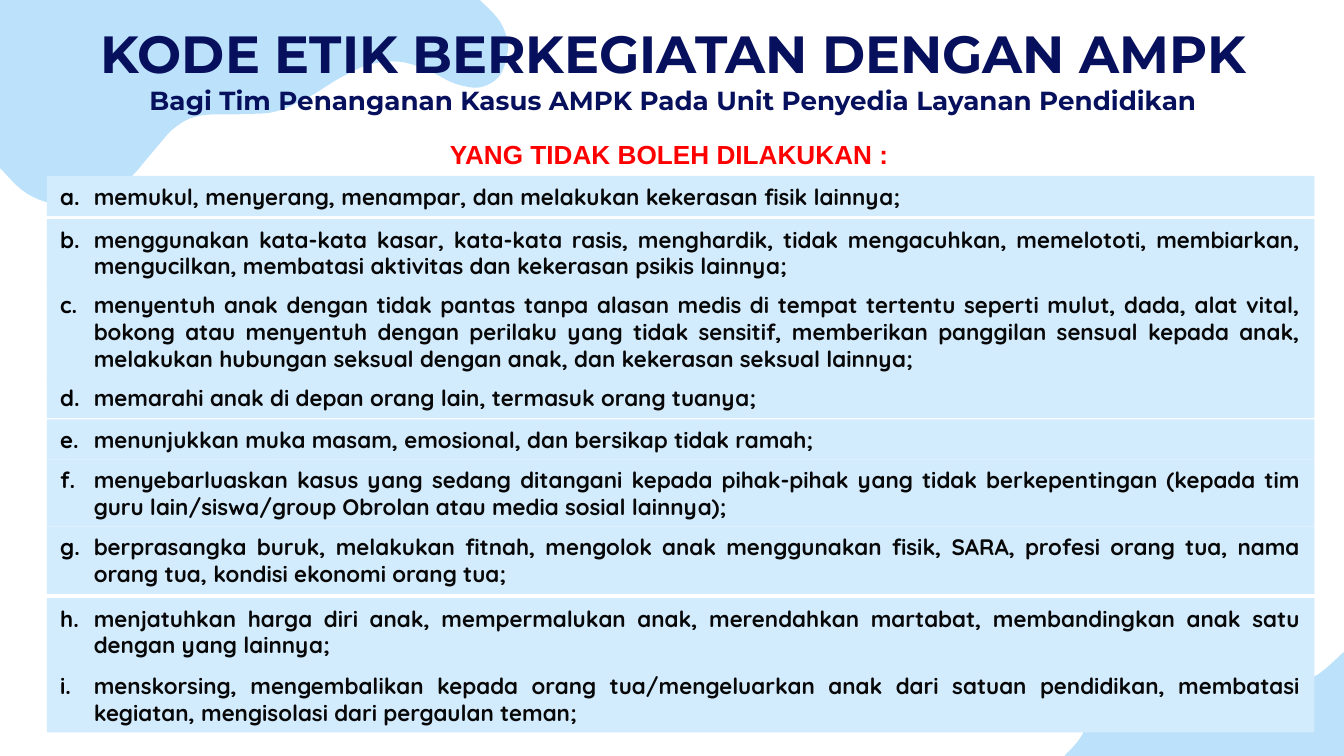
from lxml import etree
from pptx import Presentation
from pptx.dml.color import RGBColor
from pptx.enum.shapes import MSO_SHAPE
from pptx.enum.text import MSO_ANCHOR, MSO_AUTO_SIZE, PP_ALIGN
from pptx.oxml.ns import qn
from pptx.util import Inches, Pt

RECT = MSO_SHAPE.RECTANGLE
MIDDLE = MSO_ANCHOR.MIDDLE
GROW = MSO_AUTO_SIZE.SHAPE_TO_FIT_TEXT
CENTER, JUSTIFY = PP_ALIGN.CENTER, PP_ALIGN.JUSTIFY
NAVY, RED, INK = "07105C", "FF0000", "080808"
SKY, PALE = "8FCEF9", "D2EBFD"


def color(code):
    return RGBColor.from_string(code)


def add_run(para, text, size, font, code):
    run = para.add_run()
    run.text = text
    run.font.size = Pt(size)
    run.font.name = font
    run.font.bold = True
    run.font.color.rgb = color(code)


prs = Presentation()
prs.slide_width = Inches(10)
prs.slide_height = Inches(10) * 9 // 16
slide = prs.slides.add_slide(prs.slide_layouts[6])
shapes = slide.shapes

# Corner blobs: a corner, then points on a smooth edge, in 1/100 inch
blobs = [
    ((0, 0), [(357, 0), (372, 16), (378, 35), (372, 56), (357, 65), (338, 62),
              (320, 53), (298, 46), (275, 48), (253, 58), (230, 72), (205, 83),
              (179, 85), (149, 86), (130, 95), (112, 115), (95, 134),
              (74, 146), (45, 152), (20, 144), (0, 125)]),
    ((1000, 562.5), [(1000, 485), (977, 504), (949, 510), (919, 495), (867, 487),
                     (815, 497), (815, 521), (805, 547), (792, 562.5)]),
]
STEPS = 6
for corner, edge in blobs:
    ends = [edge[0]] + edge + [edge[-1]]
    curve = [edge[0]]
    for a, b, c, d in zip(ends, ends[1:], ends[2:], ends[3:]):
        for step in range(1, STEPS + 1):
            t = step / STEPS
            # Catmull-Rom spline between b and c
            curve.append(tuple(
                (2 * q + (r - p) * t + (2 * p - 5 * q + 4 * r - s) * t**2
                 + (3 * q - p - 3 * r + s) * t**3) * 5
                for p, q, r, s in zip(a, b, c, d)))
    curve[0] = tuple(10 * n for n in edge[0])
    start = [10 * n for n in corner]
    path = shapes.build_freeform(*start, scale=Inches(1) / 1000)
    path.add_line_segments(curve, close=True)
    blob = path.convert_to_shape()
    blob.shadow.inherit = False
    blob.line.fill.background()
    blob.fill.solid()
    blob.fill.fore_color.rgb = color(SKY)
    tint = next(blob.element.spPr.iter(qn("a:srgbClr")))
    etree.SubElement(tint, qn("a:alpha"), val="60000")

title = shapes.add_textbox(Inches(0.51), Inches(0.06), Inches(9), Inches(0.63))
frame = title.text_frame
frame.word_wrap = True
frame.margin_top = frame.margin_bottom = Inches(0.1)
para = frame.paragraphs[0]
para.alignment = CENTER
add_run(para, "KODE ETIK BERKEGIATAN DENGAN AMPK", 28, "Montserrat", NAVY)
para.add_line_break()
add_run(para, "Bagi Tim Penanganan Kasus AMPK Pada Unit Penyedia Layanan Pendidikan",
        14, "Montserrat", NAVY)

head = shapes.add_textbox(Inches(3.25), Inches(0.98), Inches(3.5), Inches(0.34))
head.text_frame.word_wrap = True
head.text_frame.auto_size = GROW
add_run(head.text_frame.paragraphs[0], "YANG TIDAK BOLEH DILAKUKAN :", 14, "Arial", RED)

# Each rule: top, height, text
rules = [
    (1.31, 0.3, "memukul, menyerang, menampar, dan melakukan kekerasan fisik lainnya;"),
    (1.63, 0.5, "menggunakan kata-kata kasar, kata-kata rasis, menghardik, tidak "
     "mengacuhkan, memelototi, membiarkan, mengucilkan, membatasi aktivitas dan "
     "kekerasan psikis lainnya;"),
    (2.11, 0.71, "menyentuh anak dengan tidak pantas tanpa alasan medis di tempat "
     "tertentu seperti mulut, dada, alat vital, bokong atau menyentuh dengan perilaku "
     "yang tidak sensitif, memberikan panggilan sensual kepada anak, melakukan "
     "hubungan seksual dengan anak, dan kekerasan seksual lainnya;"),
    (2.81, 0.3, "memarahi anak di depan orang lain, termasuk orang tuanya;"),
    (3.12, 0.3, "menunjukkan muka masam, emosional, dan bersikap tidak ramah;"),
    (3.42, 0.5, "menyebarluaskan kasus yang sedang ditangani kepada pihak-pihak yang "
     "tidak berkepentingan (kepada tim guru lain/siswa/group Obrolan atau media "
     "sosial lainnya);"),
    (3.92, 0.5, "berprasangka buruk, melakukan fitnah, mengolok anak menggunakan "
     "fisik, SARA, profesi orang tua, nama orang tua, kondisi ekonomi orang tua;"),
    (4.45, 0.5, "menjatuhkan harga diri anak, mempermalukan anak, merendahkan "
     "martabat, membandingkan anak satu dengan yang lainnya;"),
    (4.95, 0.5, "menskorsing, mengembalikan kepada orang tua/mengeluarkan anak dari "
     "satuan pendidikan, membatasi kegiatan, mengisolasi dari pergaulan teman;"),
]
for number, (top, height, text) in enumerate(rules, 1):
    box = shapes.add_shape(RECT, Inches(0.35), Inches(top), Inches(9.43), Inches(height))
    box.shadow.inherit = False
    box.line.fill.background()
    box.fill.solid()
    box.fill.fore_color.rgb = color(PALE)
    frame = box.text_frame
    frame.word_wrap = True
    frame.auto_size = GROW
    frame.vertical_anchor = MIDDLE
    para = frame.paragraphs[0]
    para.alignment = JUSTIFY
    props = para._p.get_or_add_pPr()
    props.set("marL", str(Inches(0.25)))
    props.set("indent", str(-Inches(0.25)))
    tint = etree.SubElement(props, qn("a:buClr"))
    etree.SubElement(tint, qn("a:srgbClr"), val="000000")
    etree.SubElement(props, qn("a:buAutoNum"), type="alphaLcPeriod", startAt=str(number))
    add_run(para, text, 12, "Quicksand", INK)

prs.save("out.pptx")
